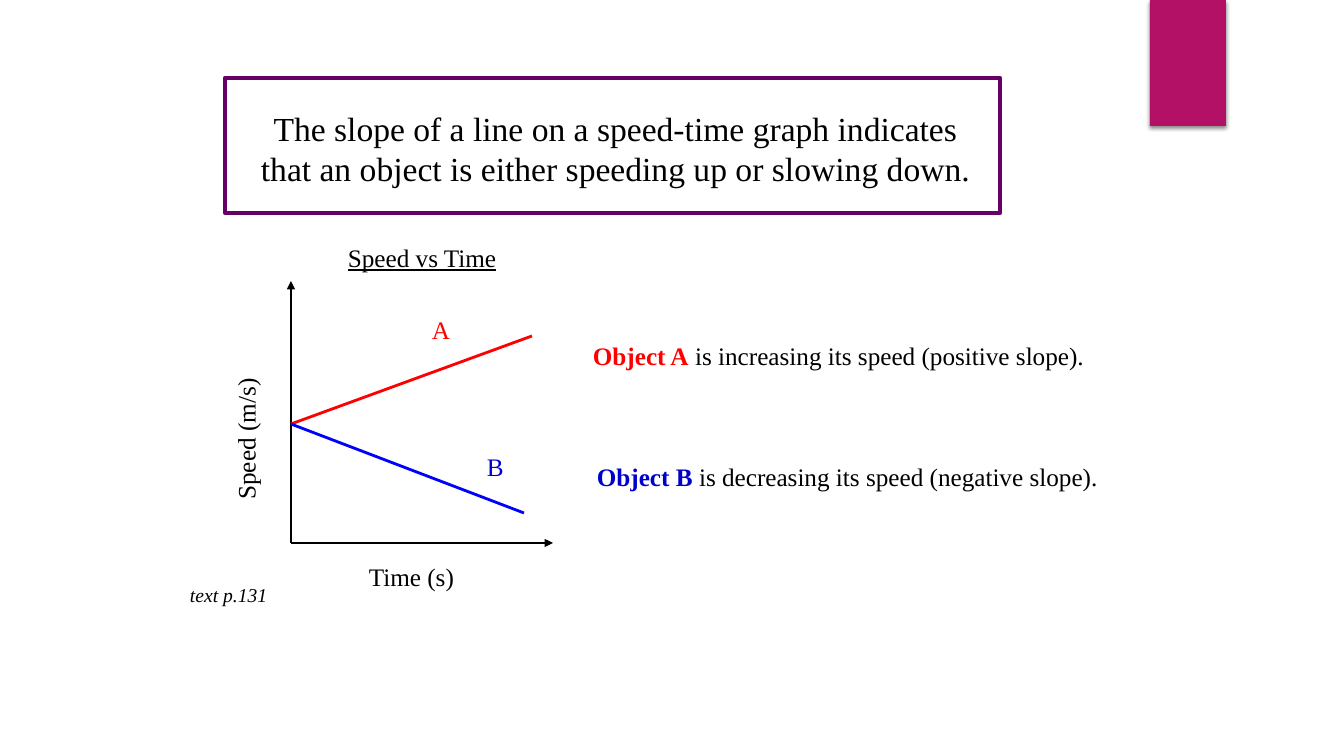
from lxml import etree
from pptx import Presentation
from pptx import util as u
from pptx.dml.color import RGBColor
from pptx.enum import shapes, text
from pptx.oxml import parse_xml
from pptx.oxml.ns import nsdecls, qn

BLACK = RGBColor(0, 0, 0)
RED = RGBColor(255, 0, 0)
BLUE = RGBColor(0, 0, 255)
DARK_BLUE = RGBColor(0, 0, 204)
PURPLE = RGBColor(102, 0, 102)
MAGENTA = RGBColor(179, 17, 102)
PX = u.Inches(1) / 100.8
SHADOW = (
    f'<a:effectLst {nsdecls("a")}>'
    '<a:outerShdw blurRad="38100" dist="25400" dir="5400000" rotWithShape="0">'
    '<a:srgbClr val="000000"><a:alpha val="45000"/></a:srgbClr>'
    '</a:outerShdw></a:effectLst>'
)


def px(*lengths):
    return [u.Emu(round(length * PX)) for length in lengths]


class SlideBuilder:
    font = "Times New Roman"
    size = 18

    def __init__(self, deck):
        self.page = deck.slides.add_slide(deck.slide_layouts[5])

    def fill_text(self, frame, spans, align=text.PP_ALIGN.LEFT):
        settings = {
            "word_wrap": True,
            "auto_size": text.MSO_AUTO_SIZE.NONE,
            "vertical_anchor": text.MSO_ANCHOR.TOP,
        }
        for name, value in settings.items():
            setattr(frame, name, value)
        para = frame.paragraphs[0]
        para.alignment = align
        for words, color, formats in spans:
            span = para.add_run()
            span.text = words
            span.font.color.rgb = color
            values = {"name": self.font, "size": u.Pt(self.size), **formats}
            for name, value in values.items():
                setattr(span.font, name, value)

    def title(self, place, words, size):
        box = self.page.shapes.title
        box.left, box.top, box.width, box.height = px(*place)
        spans = [(words, BLACK, {"size": u.Pt(size)})]
        self.fill_text(box.text_frame, spans, text.PP_ALIGN.CENTER)

    def label(self, place, *spans, rotation=0):
        box = self.page.shapes.add_textbox(*px(*place))
        box.rotation = rotation
        self.fill_text(box.text_frame, spans)

    def line(self, start, end, color, arrow=False):
        connector = self.page.shapes.add_connector(
            shapes.MSO_CONNECTOR.STRAIGHT, *px(*start, *end))
        connector.line.color.rgb = color
        connector.line.width = u.Pt(2)
        properties = connector._element.spPr
        if arrow:
            outline = properties.find(qn("a:ln"))
            etree.SubElement(outline, qn("a:tailEnd"), type="triangle")
        etree.SubElement(properties, qn("a:effectLst"))

    def rectangle(self, place):
        box = self.page.shapes.add_shape(
            shapes.MSO_SHAPE.RECTANGLE, *px(*place))
        box.shadow.inherit = False
        return box

    def ribbon(self, place, color):
        box = self.rectangle(place)
        box.fill.solid()
        box.fill.fore_color.rgb = color
        box.line.fill.background()
        properties = box._element.spPr
        properties.replace(properties.find(qn("a:effectLst")),
                           parse_xml(SHADOW))

    def border(self, place, color):
        box = self.rectangle(place)
        box.fill.background()
        box.line.color.rgb = color
        box.line.width = u.Pt(3)


def main():
    deck = Presentation()
    deck.slide_width, deck.slide_height = px(1344, 756)
    slide = SlideBuilder(deck)

    slide.ribbon((1150, 0, 76, 126), MAGENTA)
    slide.title((245, 103, 741, 92),
                "The slope of a line on a speed-time graph indicates that "
                "an object is either speeding up or slowing down.", 24)
    slide.border((225, 78, 775, 135), PURPLE)

    origin, start = (291, 543), (291, 424)
    for tip in ((291, 281), (553, 543)):
        slide.line(origin, tip, BLACK, arrow=True)
    for end, color in (((532, 336), RED), ((524, 513), BLUE)):
        slide.line(start, end, color)

    slide.label((338, 237, 199, 40),
                ("Speed vs Time", BLACK, {"underline": True}))
    slide.label((150, 394, 191, 40), ("Speed (m/s)", BLACK, {}), rotation=270)
    slide.label((359, 556, 127, 40), ("Time (s)", BLACK, {}))
    slide.label((180, 578, 123, 33),
                ("text p.131", BLACK, {"size": u.Pt(14), "italic": True}))

    objects = (
        ("A", RED, (422, 309, 55, 40), (583, 335, 585, 40),
         " is increasing its speed (positive slope)."),
        ("B", DARK_BLUE, (477, 446, 38, 40), (587, 456, 589, 40),
         " is decreasing its speed (negative slope)."),
    )
    for letter, color, mark, note, meaning in objects:
        slide.label(mark, (letter, color, {}))
        slide.label(note, (f"Object {letter}", color, {"bold": True}),
                    (meaning, BLACK, {}))

    deck.save("out.pptx")


if __name__ == "__main__":
    main()
